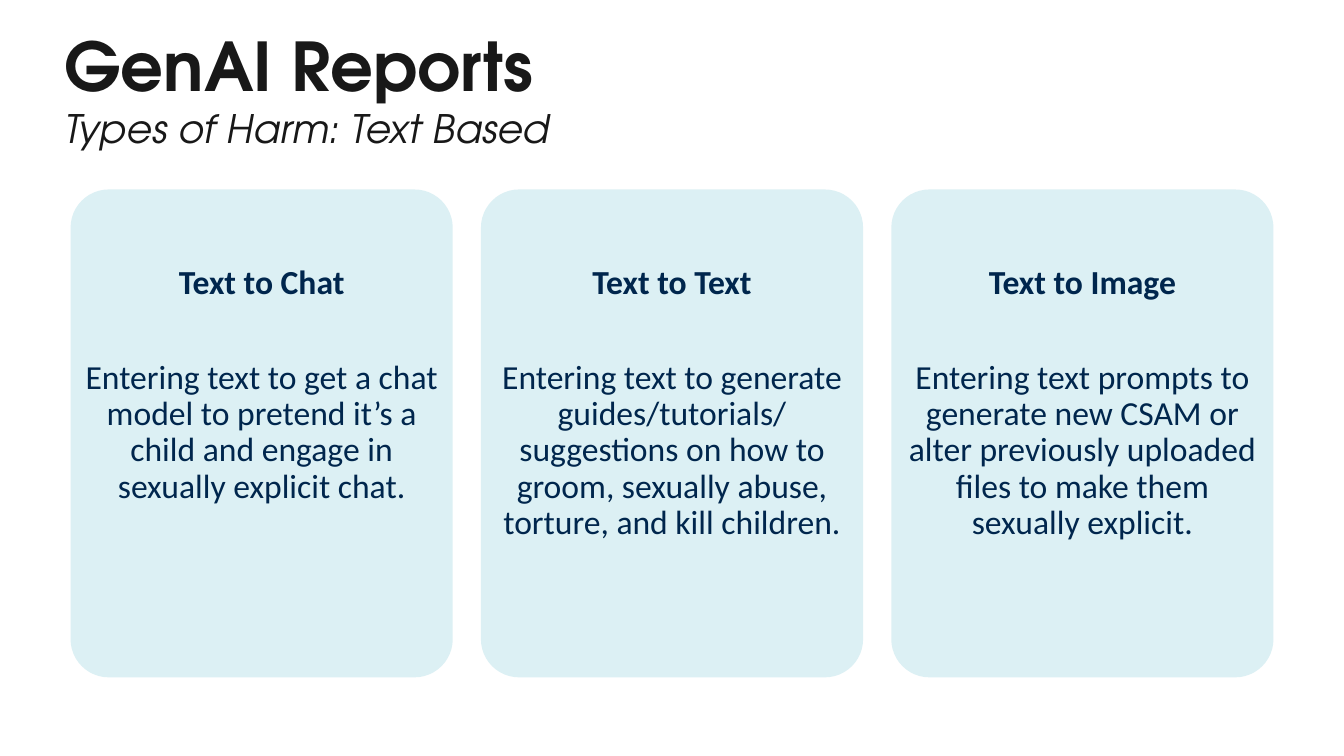
from pptx import Presentation
from pptx.dml.color import RGBColor
from pptx.enum.shapes import MSO_SHAPE as Shape
from pptx.enum.text import MSO_ANCHOR as Anchor, PP_ALIGN as Align
from pptx.util import Inches, Pt

TITLE = "GenAI Reports"
SUBTITLE = "Types of Harm: Text Based"
CARDS = [
    ("Text to Chat", [
        "Entering text to get a chat model to pretend it’s a child and engage in sexually explicit chat."]),
    ("Text to Text", [
        "Entering text to generate guides/tutorials/",
        "suggestions on how to groom, sexually abuse, torture, and kill children."]),
    ("Text to Image", [
        "Entering text prompts to generate new CSAM or alter previously uploaded files to make them sexually explicit."]),
]

INK = RGBColor(0x18, 0x18, 0x18)
NAVY = RGBColor(0x00, 0x26, 0x4D)
PALE_BLUE = RGBColor(0xDC, 0xF0, 0xF4)
TITLE_FONT, BODY_FONT = "TeX Gyre Adventor", "Calibri"

CARD_LEFT, CARD_TOP = 0.7, 1.88
CARD_WIDTH, CARD_HEIGHT = 3.79, 4.84
CARD_PITCH = 4.07


def write(frame, text, font, size, color, bold=False, italic=False,
          align=Align.LEFT, spacing=1.0, after=0):
    para = frame.paragraphs[0] if not frame.text else frame.add_paragraph()
    para.alignment = align
    para.line_spacing = spacing
    para.space_after = Pt(after)
    span = para.add_run()
    span.text = text
    span.font.name = font
    span.font.size = Pt(size)
    span.font.bold = bold
    span.font.italic = italic
    span.font.color.rgb = color


def add_card(page, column, heading, body):
    card = page.shapes.add_shape(
        Shape.ROUNDED_RECTANGLE, Inches(CARD_LEFT + column * CARD_PITCH), Inches(CARD_TOP),
        Inches(CARD_WIDTH), Inches(CARD_HEIGHT))
    card.adjustments[0] = 0.1
    card.shadow.inherit = False
    card.fill.solid()
    card.fill.fore_color.rgb = PALE_BLUE
    card.line.fill.background()
    frame = card.text_frame
    frame.word_wrap = True
    frame.vertical_anchor = Anchor.TOP
    frame.margin_left = frame.margin_right = 0
    frame.margin_top = Inches(0.64)
    style = dict(font=BODY_FONT, size=24, color=NAVY, align=Align.CENTER, spacing=0.9)
    write(frame, heading, bold=True, after=42, **style)
    for text in body:
        write(frame, text, **style)


def main():
    deck = Presentation()
    deck.slide_width, deck.slide_height = Inches(13.33), Inches(7.5)
    page = deck.slides.add_slide(deck.slide_layouts[6])

    box = page.shapes.add_textbox(Inches(0.54), Inches(0.19), Inches(11.93), Inches(1.38))
    box.text_frame.word_wrap = True
    write(box.text_frame, TITLE, TITLE_FONT, 48, INK, bold=True)
    write(box.text_frame, SUBTITLE, TITLE_FONT, 28, INK, italic=True)

    for column, (heading, body) in enumerate(CARDS):
        add_card(page, column, heading, body)

    deck.save("out.pptx")


if __name__ == "__main__":
    main()
